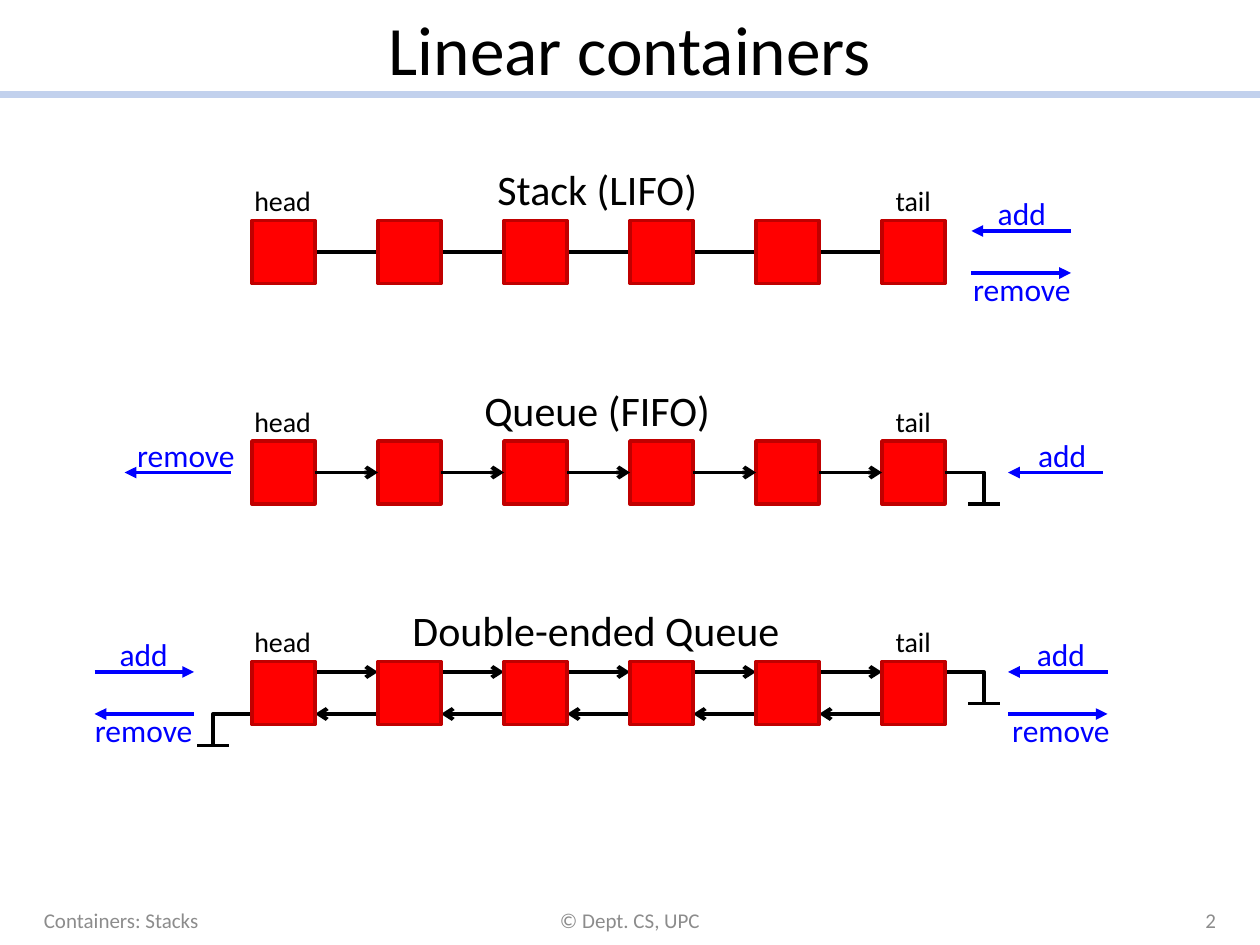
from dataclasses import dataclass

from lxml import etree
from pptx import Presentation
from pptx.dml.color import RGBColor
from pptx.enum.shapes import MSO_CONNECTOR, MSO_SHAPE
from pptx.enum.text import MSO_ANCHOR, MSO_AUTO_SIZE, PP_ALIGN
from pptx.oxml.ns import qn
from pptx.util import Inches, Pt

STRAIGHT, RECT = MSO_CONNECTOR.STRAIGHT, MSO_SHAPE.RECTANGLE
LEFT, CENTER, RIGHT = PP_ALIGN.LEFT, PP_ALIGN.CENTER, PP_ALIGN.RIGHT
TOP, MIDDLE = MSO_ANCHOR.TOP, MSO_ANCHOR.MIDDLE
FIT_TEXT = MSO_AUTO_SIZE.SHAPE_TO_FIT_TEXT
LEFT_SIDE, RIGHT_SIDE = 1, 3


@dataclass(frozen=True)
class Theme:
    font: str = "Calibri"
    ink: str = "000000"
    muted: str = "8C8C8C"
    rule: str = "C2D1ED"
    node: str = "FF0000"
    node_edge: str = "C00000"
    action: str = "0000FF"
    title_size: float = 39.6
    caption_size: float = 24
    action_size: float = 18
    end_size: float = 16
    footer_size: float = 12
    stroke: float = 2.25
    edge: float = 2
    rule_stroke: float = 4


THEME = Theme()
SLIDE_W, SLIDE_H = 10, 7.5
HEADER_H = SLIDE_H / 10
NODES = 6
NODE = 0.5
CHAIN_X, CHAIN_W = 2, 5.5
CHAIN_TOP, CHAIN_STEP = 1.75, 1.75
ARROW_W = 0.79
UPPER, MID, LOWER = NODE / 6, NODE / 2, NODE * 5 / 6
LABEL_W = {"add": 0.59, "remove": 0.98, "head": 0.66, "tail": 0.48}


def rgb(color):
    return RGBColor.from_string(color)


def add_text(s, text, x, y, w, h, size, color=THEME.ink, align=LEFT,
             anchor=TOP, wrap=True):
    sp = s.shapes.add_textbox(Inches(x), Inches(y), Inches(w), Inches(h))
    tf = sp.text_frame
    tf.word_wrap = wrap
    tf.vertical_anchor = anchor
    if not wrap:
        tf.auto_size = FIT_TEXT
    p = tf.paragraphs[0]
    p.alignment = align
    r = p.add_run()
    r.text = text
    r.font.name, r.font.size = THEME.font, Pt(size)
    r.font.color.rgb = rgb(color)


def add_label(s, text, center, y, w, h, size, color=THEME.ink):
    """Place a one-line label whose middle is at center."""
    add_text(s, text, center - w / 2, y, w, h, size, color, wrap=False)


def add_line(s, x1, y1, x2, y2, color=THEME.ink, width=THEME.stroke, tip=None):
    """Draw a line; tip names the arrowhead at its end."""
    line = s.shapes.add_connector(STRAIGHT, Inches(x1), Inches(y1),
                                  Inches(x2), Inches(y2))
    line.line.color.rgb = rgb(color)
    line.line.width = Pt(width)
    if tip:
        etree.SubElement(line.line._get_or_add_ln(), qn("a:tailEnd"), type=tip)
    etree.SubElement(line._element.spPr, qn("a:effectLst"))
    return line


def join(line, start, end):
    line.begin_connect(start, RIGHT_SIDE)
    line.end_connect(end, LEFT_SIDE)


def add_ground(s, x, y, direction):
    """Draw the end-of-list mark; direction is 1 to the right, -1 to the left."""
    corner, foot = x + 0.31 * direction, y + NODE / 2
    points = [(Inches(px), Inches(py))
              for px, py in ((x, y), (corner, y), (corner, foot))]
    builder = s.shapes.build_freeform(*points[0])
    builder.add_line_segments(points[1:], close=False)
    sp = builder.convert_to_shape()
    sp.shadow.inherit = False
    sp.fill.background()
    sp.line.color.rgb = rgb(THEME.ink)
    sp.line.width = Pt(THEME.stroke)
    add_line(s, corner - NODE / 4, foot, corner + NODE / 4, foot)


def add_nodes(s, x, y, w, h):
    """Spread square nodes of side h evenly over the width w."""
    pitch = (w - h) / (NODES - 1)
    nodes = []
    for i in range(NODES):
        sp = s.shapes.add_shape(RECT, Inches(x + i * pitch), Inches(y),
                                Inches(h), Inches(h))
        sp.shadow.inherit = False
        sp.fill.solid()
        sp.fill.fore_color.rgb = rgb(THEME.node)
        sp.line.color.rgb = rgb(THEME.node_edge)
        sp.line.width = Pt(THEME.edge)
        nodes.append(sp)
    return nodes


def add_chain_labels(s, caption, caption_w, x, y, w, h):
    add_label(s, caption, x + w / 2, y - h, caption_w, 0.5, THEME.caption_size)
    for text, center in (("head", x + h / 2), ("tail", x + w - h / 2)):
        add_label(s, text, center, y - 0.34, LABEL_W[text], 0.37, THEME.end_size)


def add_action(s, text, x, y, direction, w=ARROW_W, below=False, shift=0.03):
    """Draw a labelled arrow from x to x + w, pointing along direction."""
    ends = (x, x + w)[::direction]
    add_line(s, ends[0], y, ends[1], y, THEME.action, tip="triangle")
    add_label(s, text, x + w / 2 + shift, y - (0.07 if below else 0.34),
              LABEL_W[text], 0.4, THEME.action_size, THEME.action)


def add_stack(s, x, y, w, h):
    link = add_line(s, x + h, y + MID, x + w - h, y + MID)
    nodes = add_nodes(s, x, y, w, h)
    join(link, nodes[0], nodes[-1])
    add_chain_labels(s, "Stack (LIFO)", 1.8, x, y, w, h)
    side = x + w + 0.21
    add_action(s, "add", side, y + UPPER, -1, shift=0.01)
    add_action(s, "remove", side, y + LOWER, 1, below=True, shift=0.01)


def add_queue(s, x, y, w, h):
    nodes = add_nodes(s, x, y, w, h)
    for start, end in zip(nodes, nodes[1:]):
        join(add_line(s, x, y, x, y, tip="arrow"), start, end)
    add_ground(s, x + w, y + MID, 1)
    add_chain_labels(s, "Queue (FIFO)", 2.01, x, y, w, h)
    add_action(s, "remove", x - 1.01, y + MID, -1, w=0.84, shift=0.07)
    add_action(s, "add", x + w + 0.5, y + MID, -1, w=0.75, shift=0.06)


def add_deque(s, x, y, w, h):
    add_ground(s, x + w, y + UPPER, 1)
    add_ground(s, x, y + LOWER, -1)
    pitch = (w - h) / (NODES - 1)
    for i in range(NODES - 1):
        start, end = x + i * pitch + h, x + (i + 1) * pitch
        add_line(s, start, y + UPPER, end, y + UPPER, tip="arrow")
        add_line(s, end, y + LOWER, start, y + LOWER, tip="arrow")
    add_nodes(s, x, y, w, h)
    add_chain_labels(s, "Double-ended Queue", 3.15, x, y, w, h)
    for side, inward, shift in ((x - 1.25, 1, 0), (x + w + 0.5, -1, 0.03)):
        add_action(s, "add", side, y + UPPER, inward, shift=shift)
        add_action(s, "remove", side, y + LOWER, -inward, below=True, shift=shift)


def add_header(s, x, y, w, h):
    add_line(s, x, y + h, x + w, y + h, THEME.rule, THEME.rule_stroke)
    add_text(s, "Linear containers", x + w / 20, y, w * 0.9, h,
             THEME.title_size, align=CENTER, anchor=MIDDLE)


def add_footer(s, x, y, w, h):
    side, middle = 2.33, 3.17
    for text, left, width, align in (
            ("Containers: Stacks", x, side, LEFT),
            ("© Dept. CS, UPC", x + (w - middle) / 2, middle, CENTER),
            ("2", x + w - side, side, RIGHT)):
        add_text(s, text, left, y, width, h, THEME.footer_size, THEME.muted,
                 align, MIDDLE)


def main():
    prs = Presentation()
    prs.slide_width, prs.slide_height = Inches(SLIDE_W), Inches(SLIDE_H)
    s = prs.slides.add_slide(prs.slide_layouts[6])
    add_header(s, 0, 0, SLIDE_W, HEADER_H)
    for i, add_chain in enumerate((add_stack, add_queue, add_deque)):
        add_chain(s, CHAIN_X, CHAIN_TOP + i * CHAIN_STEP, CHAIN_W, NODE)
    add_footer(s, 0.25, 7.1, SLIDE_W - 0.5, 0.4)
    prs.save("out.pptx")


if __name__ == "__main__":
    main()
